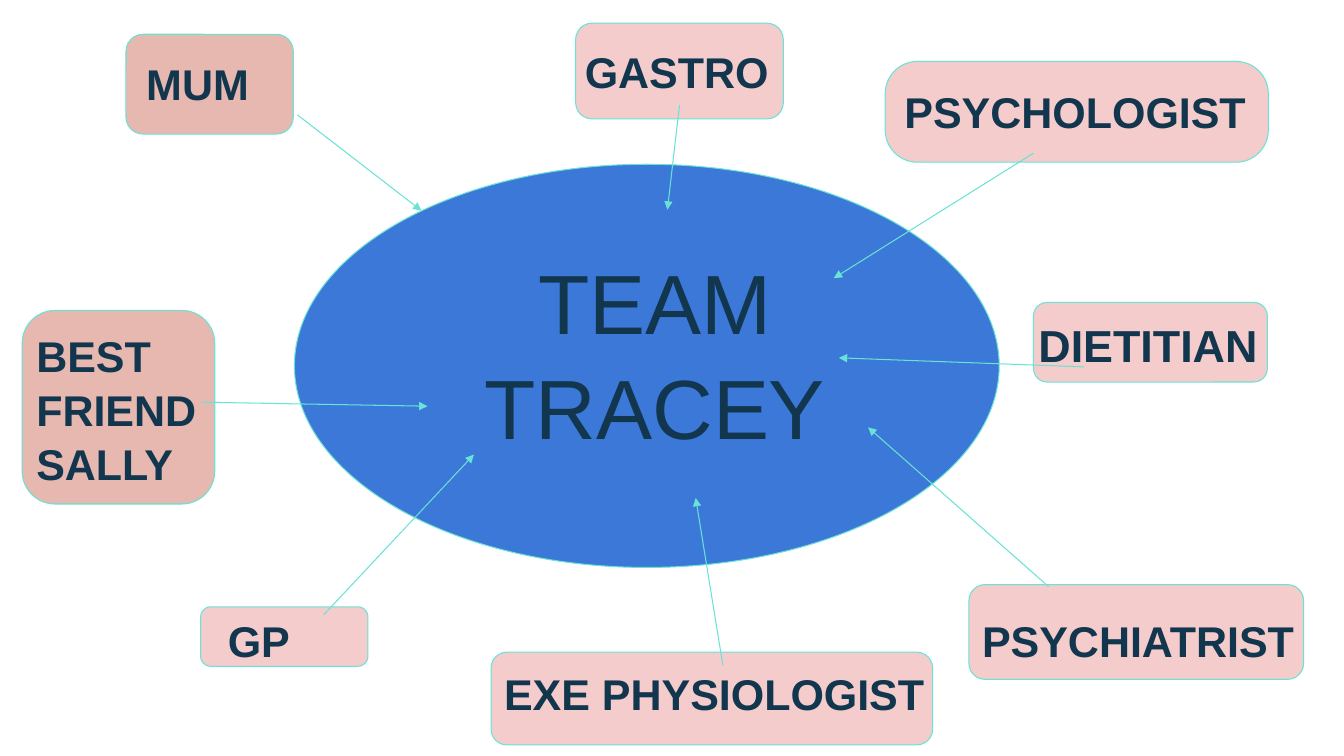
from lxml.etree import SubElement
from pptx import Presentation
from pptx.dml.color import RGBColor as Rgb
from pptx.enum.shapes import MSO_CONNECTOR as Link, MSO_SHAPE as Form
from pptx.enum.text import MSO_ANCHOR as Anchor, MSO_AUTO_SIZE as Fit, PP_ALIGN as Align
from pptx.oxml.ns import qn
from pptx.util import Inches, Pt

HUES = {"hub": "3C78D8", "care": "F4CCCC", "kin": "E6B8AF", "edge": "68E3D5", "ink": "11364D"}

TEAM = [
    ("kin", (1.25, 0.34, 1.66, 0.99), 0.17, ["MUM"], (0.07, 0.08, 1.91, 0.79), 30.7,
     (2.95, 1.14, 4.18, 2.09)),
    ("care", (5.71, 0.23, 2.06, 0.95), 0.17, ["GASTRO"], (-0.04, 0.07, 2.56, 0.79), 30.7,
     (6.74, 1.04, 6.62, 2.08)),
    ("care", (8.78, 0.61, 3.8, 1), 0.32, ["PSYCHOLOGIST"], (0.06, 0.09, 4.49, 0.79), 30.7,
     (10.25, 1.52, 8.27, 2.76)),
    ("care", (10.25, 3, 2.32, 0.79), 0.17, ["DIETITIAN"], (-0.08, 0, 3.16, 0.81), 32,
     (10.75, 3.64, 8.32, 3.55)),
    ("kin", (0.22, 3.08, 1.91, 1.92), 0.17, ["BEST FRIEND", "SALLY"], (0.01, 0.06, 2.09, 1.82), 30.7,
     (2, 3.99, 4.24, 4.03)),
    ("care", (1.99, 6.02, 1.66, 0.59), 0.17, ["GP"], (0.14, -0.07, 1.43, 0.79), 30.7,
     (3.21, 6.1, 4.7, 4.51)),
    ("care", (4.87, 6.47, 4.38, 0.92), 0.17, ["EXE PHYSIOLOGIST"], (0, 0, 8.46, 0.79), 30.7,
     (7.17, 6.6, 6.9, 4.94)),
    ("care", (9.61, 5.8, 3.32, 0.94), 0.17, ["PSYCHIATRIST"], (0, 0.15, 3.72, 0.79), 30.7,
     (10.4, 5.82, 8.61, 4.24)),
]


def tint(name):
    return Rgb.from_string(HUES[name])


def add_form(slide, form, box, hue):
    shape = slide.shapes.add_shape(form, *map(Inches, box))
    shape.shadow.inherit = False
    shape.fill.solid()
    shape.fill.fore_color.rgb = tint(hue)
    shape.line.color.rgb = tint("edge")
    shape.line.width = Pt(0.75)
    return shape


def write(frame, lines, size, bold, align):
    frame.word_wrap = True
    frame.auto_size = Fit.SHAPE_TO_FIT_TEXT
    frame.vertical_anchor = Anchor.MIDDLE
    frame.margin_left = frame.margin_right = Inches(0.13)
    frame.margin_top = frame.margin_bottom = Inches(0.13)
    for i, line in enumerate(lines):
        para = frame.add_paragraph() if i else frame.paragraphs[0]
        para.alignment = align
        para.line_spacing = 1.04
        run = para.add_run()
        run.text = line
        run.font.name = "Arial"
        run.font.size = Pt(size)
        run.font.bold = bold
        run.font.color.rgb = tint("ink")


def add_hub(slide, box):
    left, top, wide, high = box
    oval = add_form(slide, Form.OVAL, box, "hub")
    title = slide.shapes.title
    oval.element.addnext(title.element)
    title.left, title.top = Inches(left + 1.64), Inches(top + 0.71)
    title.width, title.height = Inches(wide - 3.12), Inches(high - 1.71)
    write(title.text_frame, ["TEAM TRACEY"], 60, False, Align.CENTER)


def add_card(slide, box, hue, curve, lines, inner, size):
    card = add_form(slide, Form.ROUNDED_RECTANGLE, box, hue)
    card.adjustments[0] = curve
    dx, dy, wide, high = inner
    label = slide.shapes.add_textbox(
        Inches(box[0] + dx), Inches(box[1] + dy), Inches(wide), Inches(high))
    write(label.text_frame, lines, size, True, Align.LEFT)


def add_arrow(slide, ends):
    arrow = slide.shapes.add_connector(Link.STRAIGHT, *map(Inches, ends))
    arrow.line.color.rgb = tint("edge")
    arrow.line.width = Pt(0.75)
    SubElement(arrow.line._get_or_add_ln(), qn("a:tailEnd"), type="triangle")
    SubElement(arrow.element.spPr, qn("a:effectLst"))


def main():
    deck = Presentation()
    deck.slide_width, deck.slide_height = Inches(13.33), Inches(7.5)
    slide = deck.slides.add_slide(deck.slide_layouts[5])
    add_hub(slide, (2.92, 1.63, 6.99, 4))
    for hue, box, curve, lines, inner, size, ends in TEAM:
        add_card(slide, box, hue, curve, lines, inner, size)
        add_arrow(slide, ends)
    deck.save("out.pptx")


if __name__ == "__main__":
    main()
